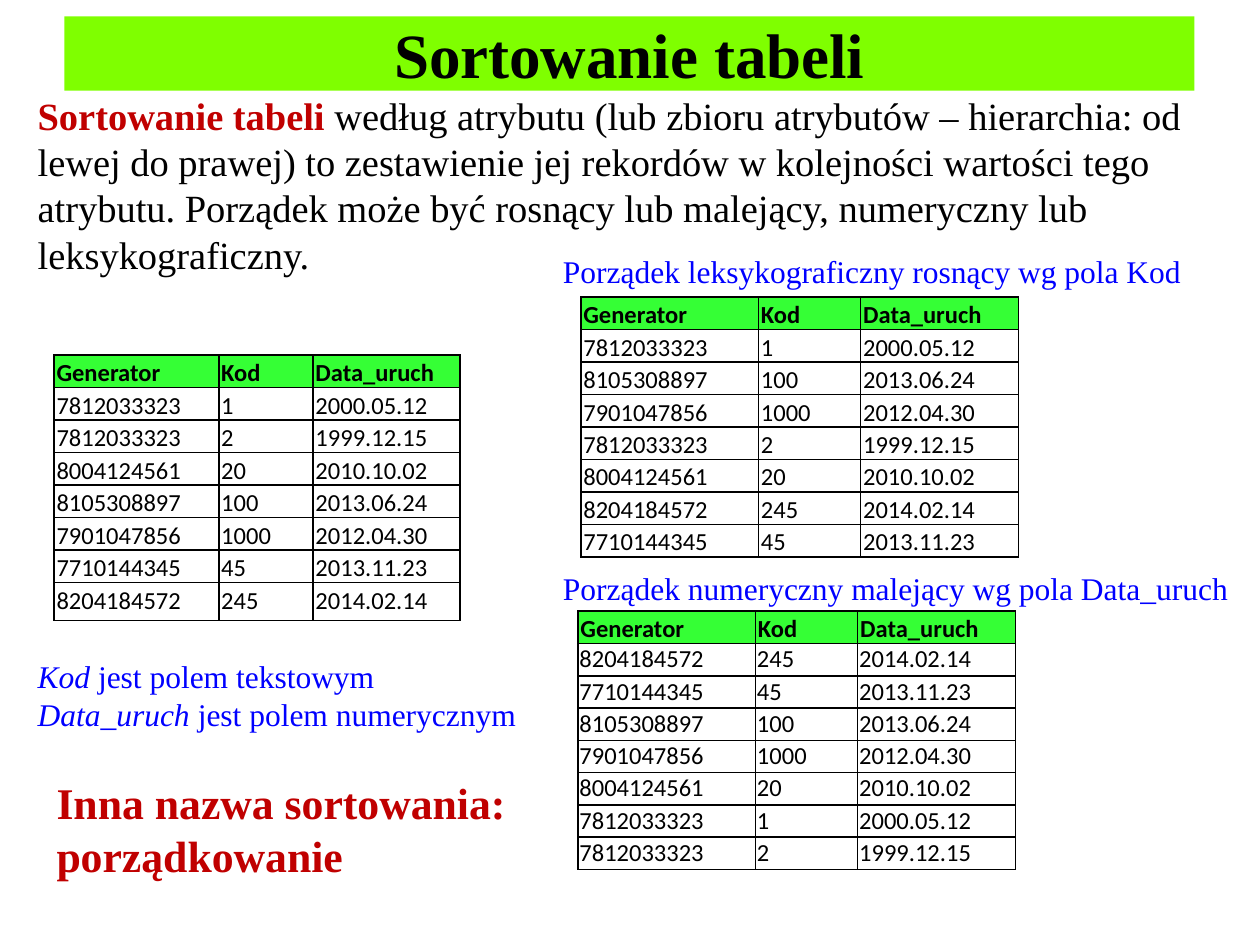
"""Build a slide on sorting a table: one source table and two sorted versions."""
from lxml import etree
from pptx import Presentation
from pptx.dml.color import RGBColor
from pptx.enum.shapes import MSO_SHAPE
from pptx.enum.text import MSO_ANCHOR, MSO_AUTO_SIZE, PP_ALIGN
from pptx.oxml.ns import qn
from pptx.util import Cm, Pt

RECTANGLE = MSO_SHAPE.RECTANGLE
MIDDLE, TOP = MSO_ANCHOR.MIDDLE, MSO_ANCHOR.TOP
CENTER = PP_ALIGN.CENTER
GROW = MSO_AUTO_SIZE.SHAPE_TO_FIT_TEXT

COLORS = {"lime": "7FFF00", "green": "35FF35", "red": "C00000",
          "blue": "0000FF", "black": "000000"}
SERIF, SANS = "Times New Roman", "Calibri"

TITLE = "Sortowanie tabeli"
TERM = "Sortowanie tabeli "
DEFINITION = ("według atrybutu (lub zbioru atrybutów – hierarchia: od lewej do prawej) "
              "to zestawienie jej rekordów w kolejności wartości tego atrybutu. "
              "Porządek może być rosnący lub malejący, numeryczny lub leksykograficzny.")
HEADER = ("Generator", "Kod", "Data_uruch")
RECORDS = [
    ("7812033323", "1", "2000.05.12"),
    ("7812033323", "2", "1999.12.15"),
    ("8004124561", "20", "2010.10.02"),
    ("8105308897", "100", "2013.06.24"),
    ("7901047856", "1000", "2012.04.30"),
    ("7710144345", "45", "2013.11.23"),
    ("8204184572", "245", "2014.02.14"),
]
BY_CODE = sorted(RECORDS, key=lambda record: record[1])
BY_DATE = sorted(RECORDS, key=lambda record: record[2], reverse=True)

SOURCE_COLUMNS, SORTED_COLUMNS = (3.32, 1.9, 2.96), (3.58, 2.06, 3.18)
TABLES = [
    (RECORDS, 1.09, 7.16, SOURCE_COLUMNS, [0.65] + [0.64] * 6 + [0.76], 0.05, True),
    (BY_CODE, 11.71, 5.99, SORTED_COLUMNS, [0.65] * 8, 0.05, True),
    (BY_DATE, 11.65, 12.32, SORTED_COLUMNS, [0.65] * 8, 0.03, False),
]

PLAIN, BOLD, ITALIC = {}, {"bold": True}, {"italic": True}
NOTES = [
    ((0.51, 1.73, 24.89, 4.04), 22, True, False,
     [[(TERM, "red", BOLD), (DEFINITION, "black", PLAIN)]]),
    ((0.89, 15.52, 10.01, 2.39), 25, True, True,
     [[("Inna nazwa sortowania: porządkowanie", "red", BOLD)]]),
    ((0.51, 13.13, 10.26, 1.8), 18, False, True,
     [[("Kod", "blue", ITALIC), (" jest polem tekstowym", "blue", PLAIN)],
      [("Data_uruch ", "blue", ITALIC), ("jest polem numerycznym", "blue", PLAIN)]]),
    ((11.1, 4.95, 13.03, 1.02), 18, False, True,
     [[("Porządek leksykograficzny rosnący wg pola Kod", "blue", PLAIN)]]),
    ((11.1, 11.35, 14.07, 1.02), 18, False, True,
     [[("Porządek numeryczny malejący wg pola Data_uruch", "blue", PLAIN)]]),
]


def color(name):
    return RGBColor.from_string(COLORS[name])


def set_font(font, face, size):
    font.name, font.size = face, Pt(size)


def add_title(slide):
    banner = slide.shapes.add_shape(RECTANGLE, Cm(1.3), Cm(0.33), Cm(22.78), Cm(1.5))
    banner.shadow.inherit = False
    banner.fill.solid()
    banner.fill.fore_color.rgb = color("lime")
    banner.line.fill.background()
    banner.text_frame.vertical_anchor = MIDDLE
    heading = banner.text_frame.paragraphs[0]
    heading.text, heading.alignment = TITLE, CENTER
    set_font(heading.font, SERIF, 36)
    heading.font.bold = True
    heading.font.color.rgb = color("black")


def add_note(slide, box, size, wrap, grow, lines):
    frame = slide.shapes.add_textbox(*map(Cm, box)).text_frame
    frame.word_wrap = wrap
    if grow:
        frame.auto_size = GROW
    for index, line in enumerate(lines):
        paragraph = frame.add_paragraph() if index else frame.paragraphs[0]
        set_font(paragraph.font, SERIF, size)
        for words, tint, style in line:
            run = paragraph.add_run()
            run.text = words
            run.font.color.rgb = color(tint)
            run.font.bold = style.get("bold")
            run.font.italic = style.get("italic")


def add_borders(cell):
    properties = cell._tc.get_or_add_tcPr()
    for position, side in enumerate(("a:lnL", "a:lnR", "a:lnT", "a:lnB")):
        line = etree.Element(qn(side), w=str(Pt(1)))
        fill = etree.SubElement(line, qn("a:solidFill"))
        etree.SubElement(fill, qn("a:srgbClr"), val=COLORS["black"])
        properties.insert(position, line)


def fill_cell(cell, words, is_header, margin, spaced):
    cell.margin_left = cell.margin_right = Cm(margin)
    cell.margin_top, cell.margin_bottom = Cm(0.02), 0
    cell.vertical_anchor = MIDDLE if is_header else TOP
    if is_header:
        cell.fill.solid()
        cell.fill.fore_color.rgb = color("green")
    else:
        cell.fill.background()
    paragraph = cell.text_frame.paragraphs[0]
    paragraph.text = words
    set_font(paragraph.font, SANS, 14)
    paragraph.font.bold = is_header
    paragraph.font.color.rgb = color("black")
    if spaced:
        paragraph.line_spacing, paragraph.space_after = 1.07, Pt(8)
    add_borders(cell)


def add_records(slide, records, left, top, widths, heights, margin, spaced):
    rows = [HEADER, *records]
    table = slide.shapes.add_table(len(rows), len(HEADER), Cm(left), Cm(top),
                                   Cm(sum(widths)), Cm(sum(heights))).table
    table.horz_banding = False
    for column, width in zip(table.columns, widths):
        column.width = Cm(width)
    for r, (row, height) in enumerate(zip(rows, heights)):
        table.rows[r].height = Cm(height)
        is_header = r == 0
        for c, words in enumerate(row):
            fill_cell(table.cell(r, c), words, is_header,
                      0.05 if is_header else margin, spaced or is_header)


def main():
    deck = Presentation()
    deck.slide_width, deck.slide_height = Cm(25.4), Cm(19.05)
    slide = deck.slides.add_slide(deck.slide_layouts[6])
    add_title(slide)
    for note in NOTES:
        add_note(slide, *note)
    for records in TABLES:
        add_records(slide, *records)
    deck.save("out.pptx")


if __name__ == "__main__":
    main()
